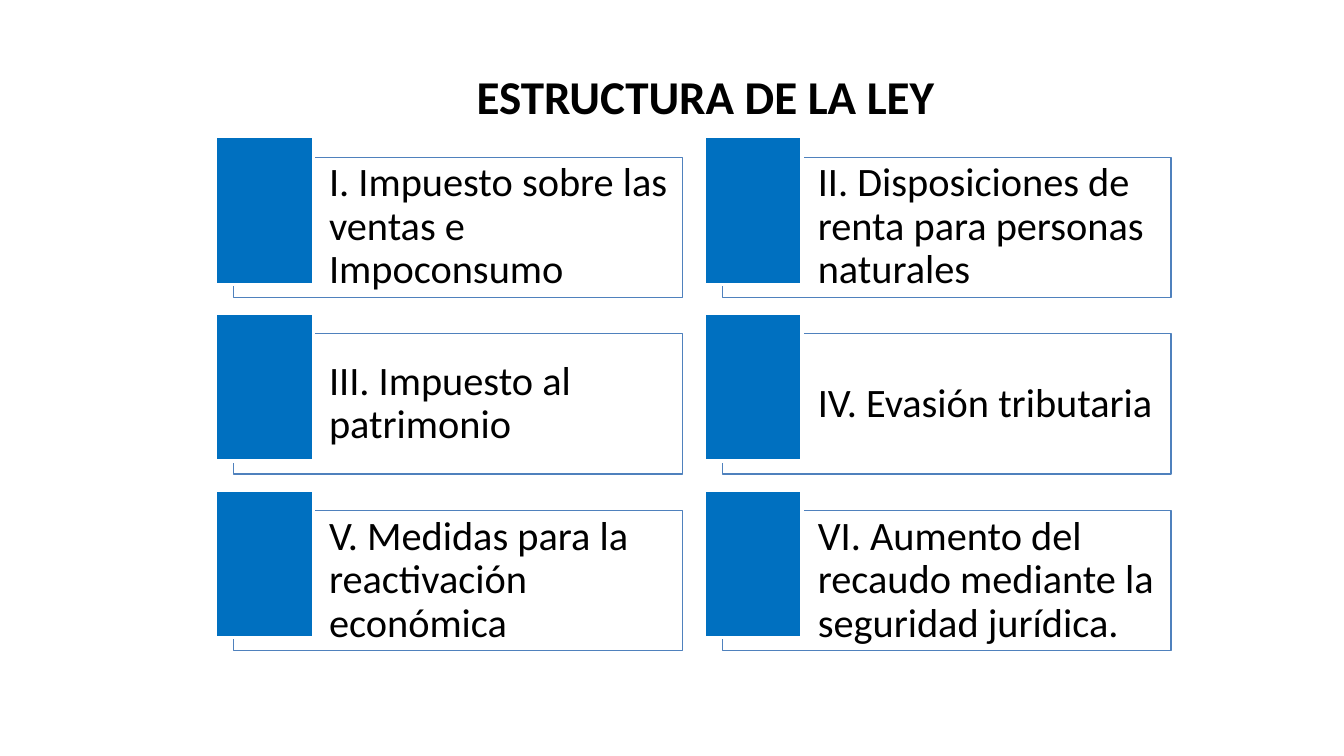
from lxml import etree
from pptx import Presentation
from pptx import util as u
from pptx.dml.color import RGBColor
from pptx.enum import shapes, text
from pptx.oxml.ns import qn

BLACK = RGBColor(0x00, 0x00, 0x00)
WHITE = RGBColor(0xFF, 0xFF, 0xFF)
BLUE = RGBColor(0x00, 0x70, 0xC0)
STEEL = RGBColor(0x4F, 0x81, 0xBD)

TITLE = "ESTRUCTURA DE LA LEY"
CHAPTERS = [
    "I. Impuesto sobre las ventas e Impoconsumo",
    "II. Disposiciones de renta para personas naturales",
    "III. Impuesto al patrimonio",
    "IV. Evasión tributaria",
    "V. Medidas para la reactivación económica",
    "VI. Aumento del recaudo mediante la seguridad jurídica.",
]


class LawPage:
    """Style and grid of the page; lengths are in inches."""
    font_name = "Calibri"
    columns = 2
    left, top = 1.78, 1.13
    column_step, row_step = 4.04, 1.46
    frame_shift = (0.15, 0.17)
    frame_size = (3.71, 1.16)
    tab_size = (0.81, 1.22)

    def __init__(self, deck):
        self.page = deck.slides.add_slide(deck.slide_layouts[6])

    def cell(self, index):
        row, column = divmod(index, self.columns)
        return self.left + column * self.column_step, self.top + row * self.row_step

    def set_words(self, box, words, size, align, bold=False):
        box.text_frame.word_wrap = True
        para = box.text_frame.paragraphs[0]
        para.text = words
        para.alignment = align
        span = para.runs[0]
        span.font.name, span.font.size = self.font_name, u.Pt(size)
        span.font.bold, span.font.color.rgb = bold, BLACK
        return para

    def title(self, words):
        box = self.page.shapes.add_textbox(
            *map(u.Inches, (1.19, 0.51, 9.28, 0.57)))
        self.set_words(box, words, 28, text.PP_ALIGN.CENTER, bold=True)

    def rectangle(self, place, size, fill, line, width):
        box = self.page.shapes.add_shape(
            shapes.MSO_SHAPE.RECTANGLE, *map(u.Inches, (*place, *size)))
        box.shadow.inherit = False
        box.fill.solid()
        box.fill.fore_color.rgb = fill
        box.line.color.rgb = line
        box.line.width = u.Pt(width)
        return box

    def chapter(self, index, words):
        x, y = self.cell(index)
        shift_x, shift_y = self.frame_shift

        # Translucent frame with the chapter name
        frame = self.rectangle((x + shift_x, y + shift_y), self.frame_size,
                               WHITE, STEEL, 0.75)
        color = frame.element.spPr.find(qn("a:solidFill"))[0]
        etree.SubElement(color, qn("a:alpha")).set("val", "40000")
        body = frame.text_frame
        body.vertical_anchor = text.MSO_ANCHOR.MIDDLE
        body.margin_left = u.Inches(0.79)
        body.margin_right = body.margin_top = body.margin_bottom = u.Inches(0.1)
        para = self.set_words(frame, words, 24, text.PP_ALIGN.LEFT)
        para.line_spacing = 0.9

        # Blue tab over the frame's corner
        self.rectangle((x, y), self.tab_size, BLUE, WHITE, 2)


def main():
    deck = Presentation()
    deck.slide_width, deck.slide_height = u.Inches(11.11), u.Inches(6.25)
    law = LawPage(deck)

    # Heading
    law.title(TITLE)

    # Chapters, two to a row
    for index, words in enumerate(CHAPTERS):
        law.chapter(index, words)

    deck.save("out.pptx")


if __name__ == "__main__":
    main()
